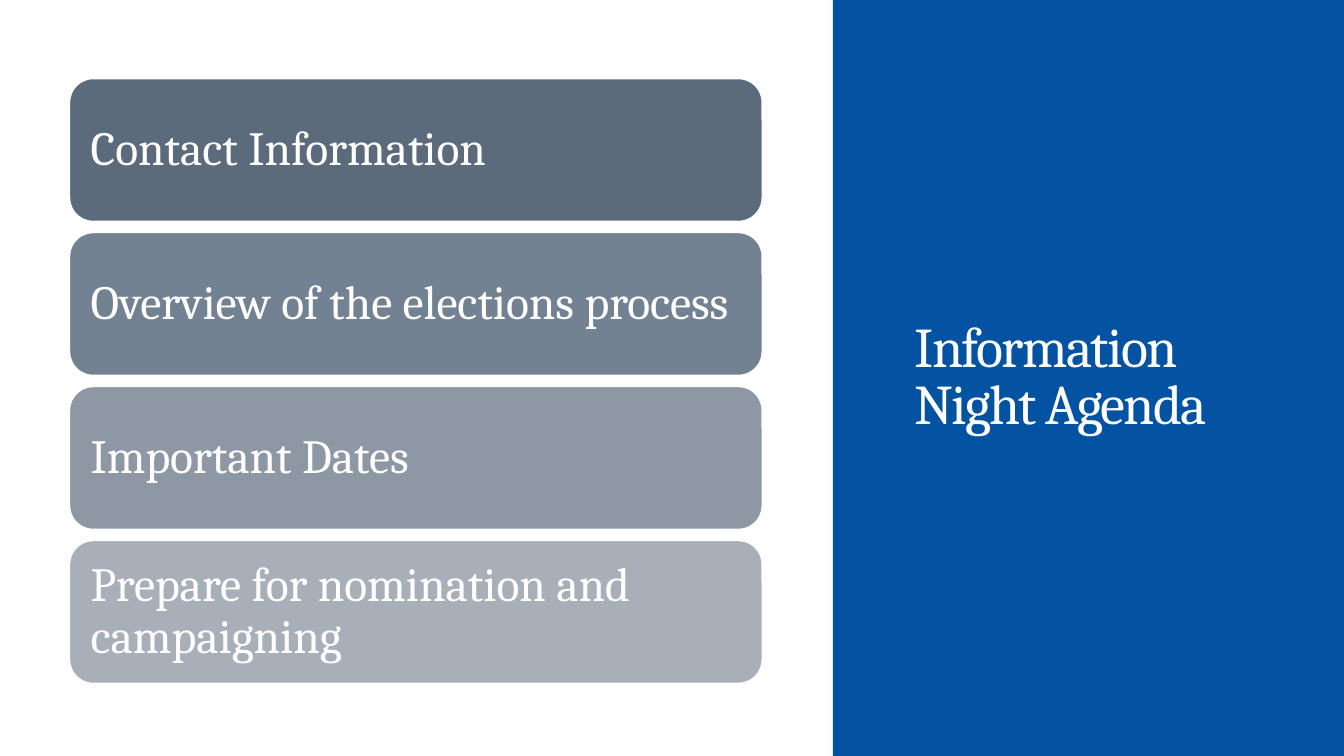
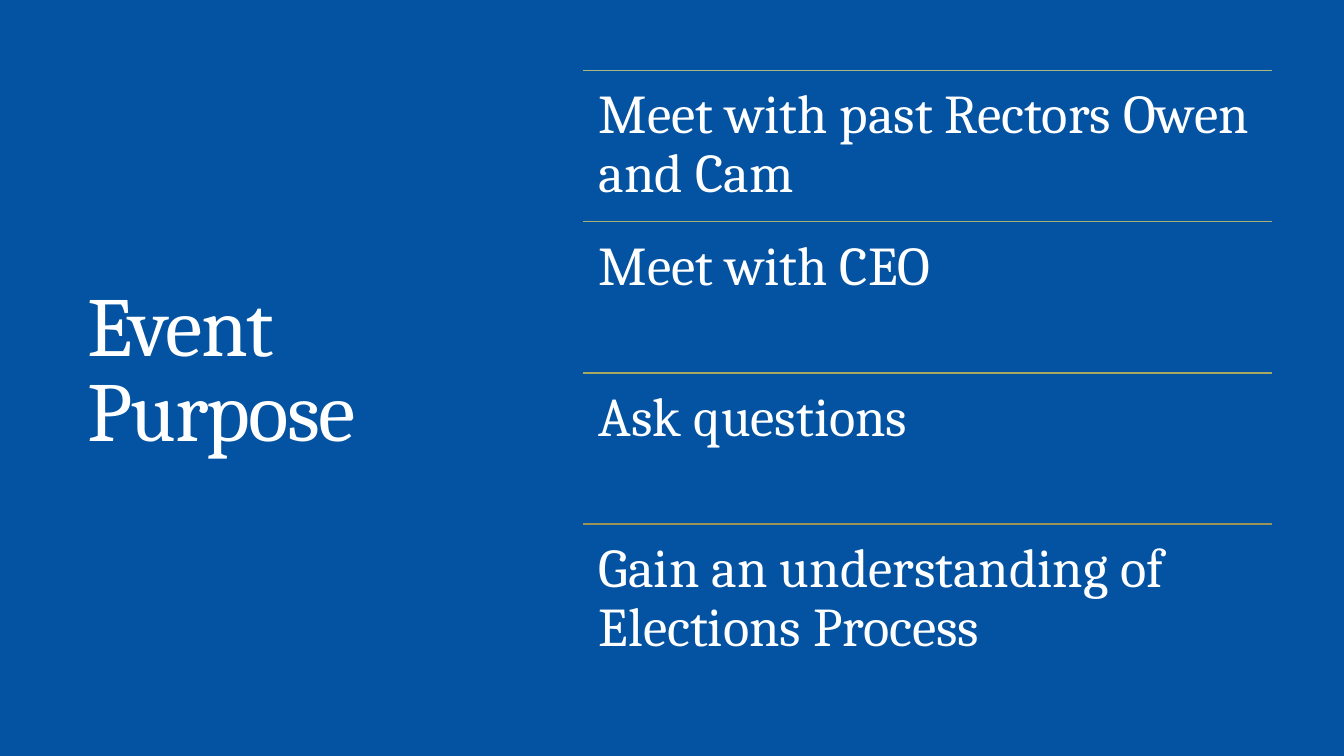
import dataclasses

import pptx
import pptx.dml.color
import pptx.enum.shapes
import pptx.enum.text
import pptx.oxml.ns
import pptx.util
from lxml import etree

Inches = pptx.util.Inches
Anchor = pptx.enum.text.MSO_ANCHOR


@dataclasses.dataclass(frozen=True)
class Theme:
    font: str = "Cambria"
    white: str = "FFFFFF"
    blue: str = "0453A2"
    card_fills: tuple = ("5C6B7C", "728293", "8E98A5", "A9AFB8")
    rule_colors: tuple = ("A8B97F", "A7B070", "A7A861", "9B9256")
    agenda_title_size: int = 40
    purpose_title_size: int = 60
    card_size: int = 34
    item_size: int = 39
    line_width: int = 1
    title_spacing: float = -1.2
    title_leading: float = 0.85
    text_leading: float = 0.9


@dataclasses.dataclass(frozen=True)
class Box:
    left: float
    top: float
    width: float
    height: float

    def lengths(self):
        return [Inches(value) for value in dataclasses.astuple(self)]

    def row(self, index, pitch, height):
        return Box(self.left, self.top + index * pitch, self.width, height)


THEME = Theme()
SLIDE_BOX = Box(0, 0, 13.33, 7.5)

AGENDA = (
    "Contact Information",
    "Overview of the elections process",
    "Important Dates",
    "Prepare for nomination and campaigning",
)
PURPOSES = (
    "Meet with past Rectors Owen and Cam",
    "Meet with CEO",
    "Ask questions",
    "Gain an understanding of Elections Process",
)


def color(value):
    return pptx.dml.color.RGBColor.from_string(value)


def apply_format(target, values):
    for name, value in values.items():
        setattr(target, name, value)


def write_text(shape, text, size, leading, anchor, inset=None):
    """Fill a shape with one left-aligned white paragraph and return its run."""
    frame = shape.text_frame
    apply_format(frame, {
        "word_wrap": True,
        "auto_size": pptx.enum.text.MSO_AUTO_SIZE.NONE,
        "vertical_anchor": anchor,
    })
    if inset is not None:
        sides = ("margin_left", "margin_top", "margin_right", "margin_bottom")
        apply_format(frame, dict.fromkeys(sides, Inches(inset)))
    paragraph = frame.paragraphs[0]
    apply_format(paragraph, {
        "alignment": pptx.enum.text.PP_ALIGN.LEFT,
        "line_spacing": leading,
    })
    run = paragraph.add_run()
    run.text = text
    apply_format(run.font, {"name": THEME.font, "size": pptx.util.Pt(size)})
    run.font.color.rgb = color(THEME.white)
    return run


def add_filled_shape(slide, kind, box, fill):
    shape = slide.shapes.add_shape(kind, *box.lengths())
    shape.shadow.inherit = False
    shape.fill.solid()
    shape.fill.fore_color.rgb = color(fill)
    shape.line.fill.background()
    return shape


def add_titled_slide(presentation, title, size, title_box, panel_box):
    """Add a slide with a blue panel and its title on top."""
    slide = presentation.slides.add_slide(presentation.slide_layouts[5])
    rectangle = pptx.enum.shapes.MSO_SHAPE.RECTANGLE
    panel = add_filled_shape(slide, rectangle, panel_box, THEME.blue)
    placeholder = slide.shapes.title
    placeholder._element.addprevious(panel._element)
    left, top, width, height = title_box.lengths()
    apply_format(placeholder, {
        "left": left, "top": top, "width": width, "height": height,
    })
    run = write_text(placeholder, title, size, THEME.title_leading, Anchor.MIDDLE)
    run._r.get_or_add_rPr().set("spc", str(round(THEME.title_spacing * 100)))
    return slide


def add_cards(slide, box, texts, gap=0.11):
    """Stack equal rounded cards in the box."""
    pitch = (box.height + gap) / len(texts)
    rounded = pptx.enum.shapes.MSO_SHAPE.ROUNDED_RECTANGLE
    for index, (text, fill) in enumerate(zip(texts, THEME.card_fills)):
        card_box = box.row(index, pitch, pitch - gap)
        card = add_filled_shape(slide, rounded, card_box, fill)
        card.line.color.rgb = color(THEME.white)
        card.line.width = pptx.util.Pt(THEME.line_width)
        # Rounded corners add 0.07 to the text inset
        write_text(card, text, THEME.card_size, THEME.text_leading,
                   Anchor.MIDDLE, inset=0.14)


def add_rule(slide, box, line_color):
    """Draw a line along the top of the box."""
    left, top, width, _ = box.lengths()
    rule = slide.shapes.add_connector(
        pptx.enum.shapes.MSO_CONNECTOR.STRAIGHT, left, top, left + width, top)
    rule.line.color.rgb = color(line_color)
    rule.line.width = pptx.util.Pt(THEME.line_width)
    etree.SubElement(rule._element.spPr, pptx.oxml.ns.qn("a:effectLst"))


def add_ruled_list(slide, box, texts):
    """Divide the box into equal rows, each below a line."""
    pitch = box.height / len(texts)
    for index, (text, line_color) in enumerate(zip(texts, THEME.rule_colors)):
        row_box = box.row(index, pitch, pitch)
        add_rule(slide, row_box, line_color)
        item = slide.shapes.add_textbox(*row_box.lengths())
        write_text(item, text, THEME.item_size, THEME.text_leading,
                   Anchor.TOP, inset=0.16)


def build_agenda(presentation):
    slide = add_titled_slide(
        presentation, "Information Night Agenda", THEME.agenda_title_size,
        title_box=Box(8.97, 0.7, 3.66, 6.11), panel_box=Box(8.26, 0, 5.07, 7.5))
    add_cards(slide, Box(0.69, 0.78, 6.87, 6), AGENDA)


def build_purpose(presentation):
    slide = add_titled_slide(
        presentation, "Event Purpose", THEME.purpose_title_size,
        title_box=Box(0.77, 0.7, 4.37, 6.01), panel_box=SLIDE_BOX)
    add_ruled_list(slide, Box(5.78, 0.7, 6.84, 6), PURPOSES)


def main():
    presentation = pptx.Presentation()
    presentation.slide_width = Inches(SLIDE_BOX.width)
    presentation.slide_height = Inches(SLIDE_BOX.height)
    build_agenda(presentation)
    build_purpose(presentation)
    presentation.save("out.pptx")


if __name__ == "__main__":
    main()
